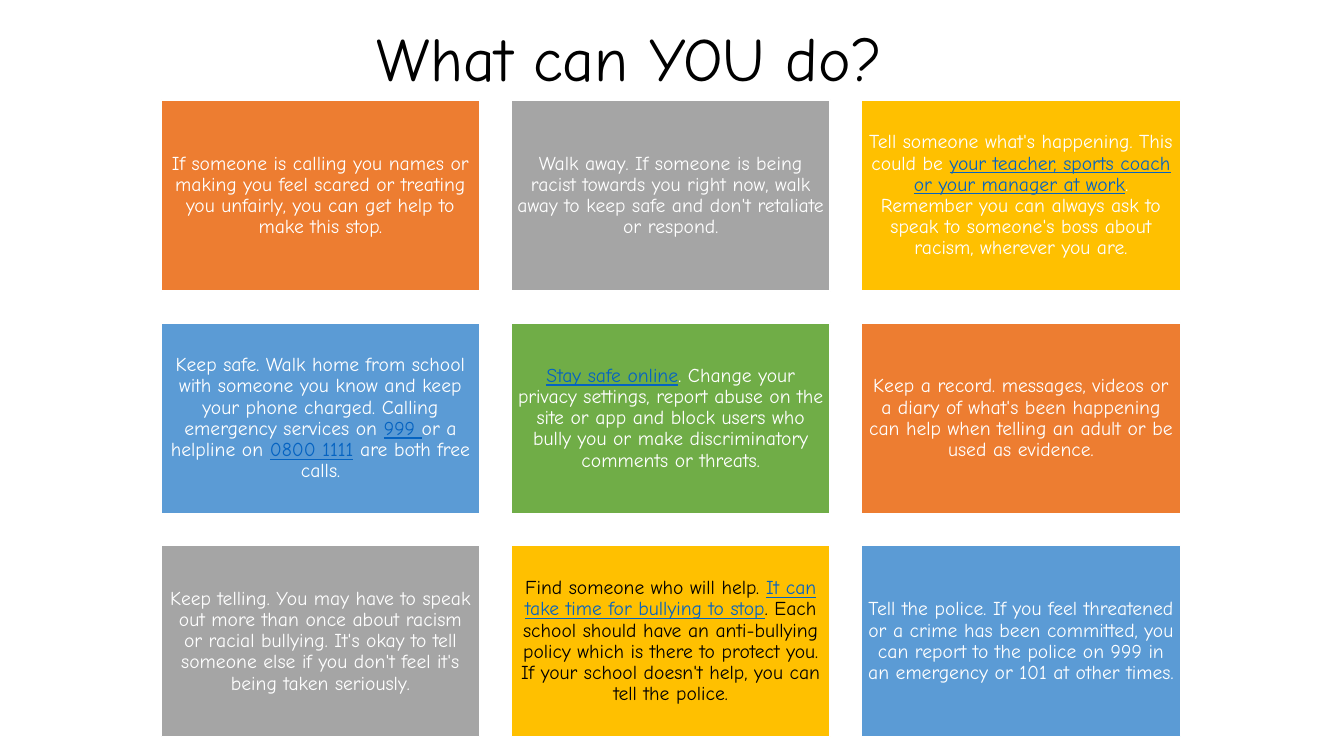
from pptx import Presentation
from pptx.dml.color import RGBColor
from pptx.enum.shapes import MSO_SHAPE
from pptx.enum.text import MSO_ANCHOR, PP_ALIGN
from pptx.util import Pt

RECTANGLE = MSO_SHAPE.RECTANGLE
MIDDLE = MSO_ANCHOR.MIDDLE
LEFT, CENTER = PP_ALIGN.LEFT, PP_ALIGN.CENTER

WHITE = RGBColor(0xFF, 0xFF, 0xFF)
BLACK = RGBColor(0x00, 0x00, 0x00)
ORANGE = RGBColor(0xED, 0x7D, 0x31)
GRAY = RGBColor(0xA5, 0xA5, 0xA5)
GOLD = RGBColor(0xFF, 0xC0, 0x00)
BLUE = RGBColor(0x5B, 0x9B, 0xD5)
GREEN = RGBColor(0x70, 0xAD, 0x47)
LINK = RGBColor(0x05, 0x63, 0xC1)

FONT = "Comic Neue"
COLUMNS = 3
GRID_LEFT, GRID_TOP = 115.2, 71.4
CARD_WIDTH, CARD_HEIGHT = 227.5, 136.5
COLUMN_STEP, ROW_STEP = 250.2, 159.2

CARDS = [
    (ORANGE, WHITE, ["If someone is calling you names or making you feel scared or treating you unfairly, "
                     "you can get help to make this stop."]),
    (GRAY, WHITE, ["Walk away. If someone is being racist towards you right now, walk away to keep safe "
                   "and don't retaliate or respond."]),
    (GOLD, WHITE, ["Tell someone what's happening. This could be ",
                   "your teacher, sports coach or your manager at work",
                   ". Remember you can always ask to speak to someone's boss about racism, wherever you are."]),
    (BLUE, WHITE, ["Keep safe. Walk home from school with someone you know and keep your phone charged. "
                   "Calling emergency services on ",
                   "999 ", "or a helpline on ", "0800 1111", " are both free calls."]),
    (GREEN, WHITE, ["", "Stay safe online",
                    ". Change your privacy settings, report abuse on the site or app and block users "
                    "who bully you or make discriminatory comments or threats."]),
    (ORANGE, WHITE, ["Keep a record. messages, videos or a diary of what's been happening can help when "
                     "telling an adult or be used as evidence."]),
    (GRAY, WHITE, ["Keep telling. You may have to speak out more than once about racism or racial bullying. "
                   "It's okay to tell someone else if you don't feel it's being taken seriously."]),
    (GOLD, BLACK, ["Find someone who will help. ", "It can take time for bullying to stop",
                   ". Each school should have an anti-bullying policy which is there to protect you. "
                   "If your school doesn't help, you can tell the police."]),
    (BLUE, WHITE, ["Tell the police. If you feel threatened or a crime has been committed, you can report "
                   "to the police on 999 in an emergency or 101 at other times."]),
]

presentation = Presentation()
presentation.slide_width = Pt(960)
presentation.slide_height = Pt(540)
slide = presentation.slides.add_slide(presentation.slide_layouts[5])

title = slide.shapes.title
title.left, title.top, title.width, title.height = Pt(262), Pt(-8), Pt(828), Pt(104.4)
title.text_frame.text = "What can YOU do?"
title.text_frame.vertical_anchor = MIDDLE
paragraph = title.text_frame.paragraphs[0]
paragraph.alignment = LEFT
paragraph.line_spacing = 0.9
paragraph.font.name = FONT
paragraph.font.size = Pt(44)
paragraph.font.color.rgb = BLACK

for index, (fill_color, text_color, pieces) in enumerate(CARDS):
    row, column = divmod(index, COLUMNS)
    card = slide.shapes.add_shape(
        RECTANGLE,
        Pt(GRID_LEFT + column * COLUMN_STEP), Pt(GRID_TOP + row * ROW_STEP),
        Pt(CARD_WIDTH), Pt(CARD_HEIGHT))
    card.shadow.inherit = False
    card.fill.solid()
    card.fill.fore_color.rgb = fill_color
    card.line.color.rgb = WHITE
    card.line.width = Pt(1)

    frame = card.text_frame
    frame.word_wrap = True
    frame.vertical_anchor = MIDDLE
    frame.margin_left = frame.margin_right = Pt(4.2)
    frame.margin_top = frame.margin_bottom = Pt(4.2)
    paragraph = frame.paragraphs[0]
    paragraph.alignment = CENTER
    paragraph.line_spacing = 0.9
    paragraph.space_after = Pt(4.9)
    paragraph.font.name = FONT
    paragraph.font.size = Pt(14)
    for position, piece in enumerate(pieces):
        if piece:
            run = paragraph.add_run()
            run.text = piece
            is_link = position % 2 == 1
            run.font.underline = is_link
            run.font.color.rgb = LINK if is_link else text_color

presentation.save("out.pptx")
